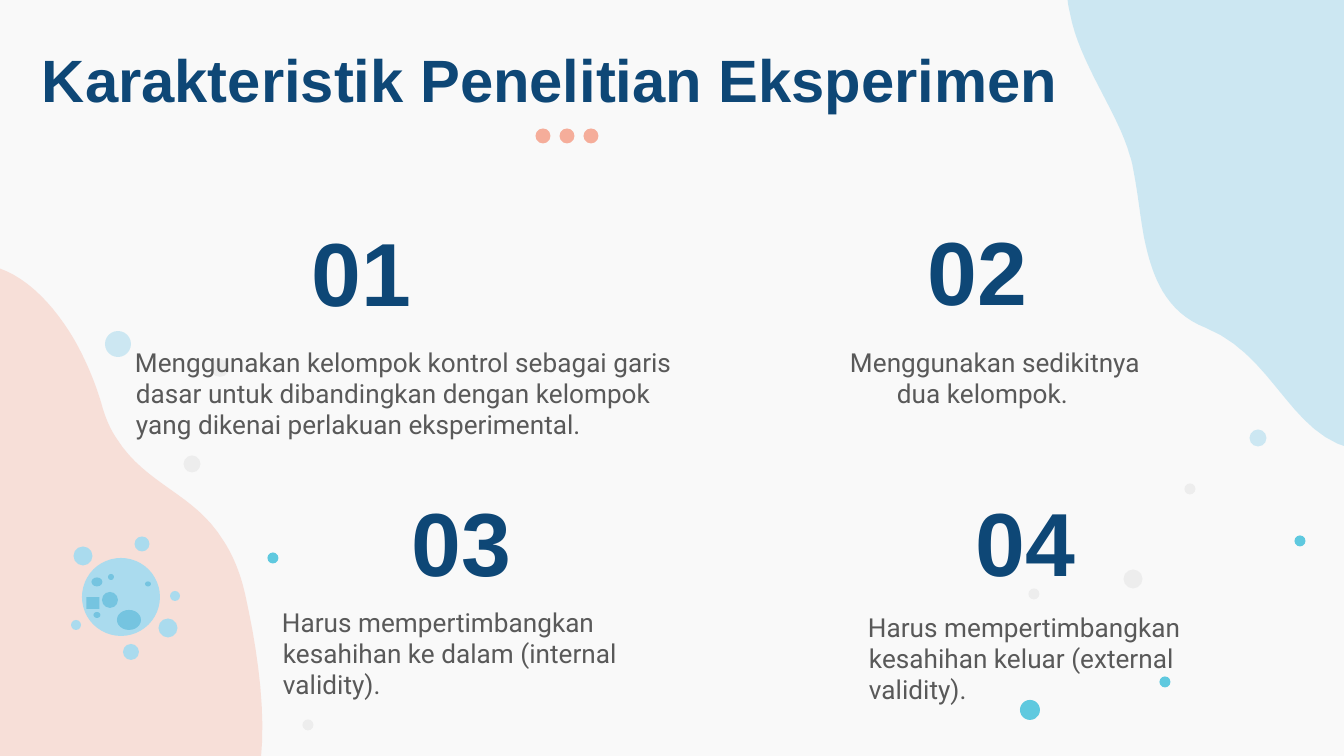
from lxml.etree import SubElement
from pptx import Presentation
from pptx.dml.color import RGBColor
from pptx.enum.shapes import MSO_SHAPE
from pptx.enum.text import MSO_ANCHOR, MSO_AUTO_SIZE, PP_ALIGN
from pptx.oxml.ns import qn
from pptx.util import Pt

W, H = 1344, 756          # slide size in px
EMU_PER_PX = 9144000 / W
INSET = 13

BACK = RGBColor(0xF9, 0xF9, 0xF9)
NAVY = RGBColor(0x0E, 0x47, 0x76)
TEXT = RGBColor(0x59, 0x59, 0x59)
SKY = RGBColor(0xAA, 0xDB, 0xEE)
CORAL = RGBColor(0xF5, 0xAD, 0x9A)
TEAL = RGBColor(0x02, 0xAC, 0xD0)
GREY = RGBColor(0xED, 0xED, 0xED)
SPOT = RGBColor(0x75, 0xC4, 0xE0)

TITLE_FONT = {"name": "Arial", "size": Pt(32), "bold": True}
NUMBER_FONT = {"name": "Arial", "size": Pt(48), "bold": True}
BODY_FONT = {"name": "Roboto", "size": Pt(14), "bold": False}

# Cubic curves: a start point, then rows of two controls and an end point
SKY_BLOB = (1070, 13), [
    (1079, 63, 1118, 112, 1130, 156), (1132, 161, 1133, 168, 1134, 173),
    (1138, 194, 1140, 215, 1144, 237), (1152, 276, 1165, 312, 1206, 328),
    (1289, 362, 1293, 470, 1403, 449), (1478, 434, 1509, 313, 1524, 224),
    (1528, 200, 1528, 180, 1525, 163), (1515, 109, 1474, 83, 1465, 30),
    (1462, 17, 1461, 4, 1462, -11), (1465, -35, 1464, -62, 1460, -89),
    (1450, -137, 1426, -181, 1382, -191), (1215, -222, 1087, -90, 1071, -35),
    (1066, -19, 1066, -3, 1070, 13)]
CORAL_BLOB = (-255, 570), [
    (-228, 613, -173, 644, -146, 681), (-142, 685, -140, 691, -136, 695),
    (-125, 712, -114, 732, -103, 751), (-82, 784, -56, 812, -12, 812),
    (78, 813, 121, 911, 216, 851), (280, 810, 265, 685, 246, 598),
    (241, 574, 233, 555, 223, 540), (194, 493, 146, 485, 117, 439),
    (110, 429, 105, 417, 101, 402), (94, 379, 83, 353, 69, 331),
    (42, 289, 4, 257, -40, 265), (-208, 298, -277, 468, -271, 524),
    (-270, 542, -265, 556, -255, 570)]

# Scattered dots: centre x, centre y, diameter
SKY_DOTS = [(118, 344, 26), (1258, 438, 17)]
TEAL_DOTS = [(273, 558, 11), (1165, 682, 11), (1030, 710, 20), (1300, 541, 11)]
GREY_DOTS = [(192, 464, 17), (308, 725, 11), (220, 368, 18),
             (1190, 489, 11), (1034, 594, 11), (1133, 579, 19)]

# Germ: body with satellites, then spots with their own width and height
GERM = [(121, 597, 78), (131, 652, 16), (142, 544, 15), (168, 628, 19),
        (83, 556, 19), (76, 625, 10), (175, 596, 10)]
GERM_SPOTS = [(97, 582, 11, 9), (111, 577, 6, 6), (148, 584, 6, 5),
              (110, 600, 16, 16), (129, 620, 24, 20), (97, 615, 7, 6)]

# Number, its left and top; description, its box and first-line indent
ITEMS = [
    ("01", (223, 238), "Menggunakan kelompok kontrol sebagai garis dasar untuk "
     "dibandingkan dengan kelompok yang dikenai perlakuan eksperimental.",
     (56, 333, 634, 102), -1),
    ("02", (839, 237), "Menggunakan sedikitnya dua kelompok.",
     (817, 333, 347, 102), -47),
    ("03", (323, 508), "Harus mempertimbangkan kesahihan ke dalam (internal "
     "validity).", (203, 593, 516, 106), -1),
    ("04", (887, 508), "Harus mempertimbangkan kesahihan keluar (external "
     "validity).", (789, 598, 473, 101), -1),
]


def px(n):
    return round(n * EMU_PER_PX)


def paint(sp, color, alpha=100):
    sp.shadow.inherit = False
    sp.line.fill.background()
    sp.fill.solid()
    sp.fill.fore_color.rgb = color
    if alpha < 100:
        clr = sp._element.spPr.find(qn("a:solidFill"))[0]
        SubElement(clr, qn("a:alpha"), val=str(alpha * 1000))


def add_blob(s, blob, color, alpha, steps=16):
    (x, y), curves = blob
    builder = s.shapes.build_freeform(px(x), px(y), scale=1.0)
    points = []
    for x1, y1, x2, y2, x3, y3 in curves:
        for i in range(1, steps + 1):
            t = i / steps
            a, b, c, d = (1-t)**3, 3*t*(1-t)**2, 3*t*t*(1-t), t**3
            points.append((px(a*x + b*x1 + c*x2 + d*x3),
                           px(a*y + b*y1 + c*y2 + d*y3)))
        x, y = x3, y3
    builder.add_line_segments(points, close=True)
    paint(builder.convert_to_shape(), color, alpha)


def add_spot(s, cx, cy, w, h, color, alpha=100, kind=MSO_SHAPE.OVAL):
    sp = s.shapes.add_shape(kind, px(cx - w / 2), px(cy - h / 2), px(w), px(h))
    paint(sp, color, alpha)


def add_dots(s, dots, color, alpha=100):
    for cx, cy, d in dots:
        add_spot(s, cx, cy, d, d, color, alpha)


def place(sp, box):
    for name, value in zip(("left", "top", "width", "height"), box):
        setattr(sp, name, px(value))


def set_text(sp, text, font, color, align, anchor=MSO_ANCHOR.TOP):
    tf = sp.text_frame
    frame = {"word_wrap": True, "auto_size": MSO_AUTO_SIZE.NONE,
             "vertical_anchor": anchor}
    frame.update({f"margin_{side}": px(INSET)
                  for side in ("left", "top", "right", "bottom")})
    for name, value in frame.items():
        setattr(tf, name, value)
    p = tf.paragraphs[0]
    p.alignment, p.space_before = align, Pt(0)
    r = p.add_run()
    r.text = text
    for name, value in font.items():
        setattr(r.font, name, value)
    r.font.color.rgb = color
    return p


def add_number(s, text, left, top):
    sp = s.shapes.add_textbox(px(left), px(top), px(277), px(65))
    set_text(sp, text, NUMBER_FONT, NAVY, PP_ALIGN.CENTER, MSO_ANCHOR.MIDDLE)


def fill_description(sp, text, box, indent):
    place(sp, box)
    p = set_text(sp, text, BODY_FONT, TEXT, PP_ALIGN.LEFT)
    pPr = p._p.get_or_add_pPr()
    pPr.set("marL", str(px(67)))
    pPr.set("indent", str(px(indent)))
    SubElement(pPr, qn("a:buNone"))


def main():
    prs = Presentation()
    prs.slide_width, prs.slide_height = px(W), px(H)
    s = prs.slides.add_slide(prs.slide_layouts.get_by_name("Comparison"))
    s.background.fill.solid()
    s.background.fill.fore_color.rgb = BACK
    title, *bodies = list(s.placeholders)

    # Background decoration
    add_blob(s, SKY_BLOB, SKY, 57)
    add_blob(s, CORAL_BLOB, CORAL, 34)
    add_dots(s, SKY_DOTS, SKY, 57)
    add_dots(s, TEAL_DOTS, TEAL, 62)
    add_dots(s, GREY_DOTS, GREY)
    add_dots(s, GERM, SKY)
    add_spot(s, 93, 603, 13, 12, SPOT, kind=MSO_SHAPE.RECTANGLE)
    for spot in GERM_SPOTS:
        add_spot(s, *spot, SPOT)

    # Placeholders go in front of the decoration
    for sp in (title, *bodies):
        s.shapes._spTree.append(sp._element)

    # Title with its three dots
    place(title, (-16, 30, 1133, 70))
    set_text(title, "Karakteristik Penelitian Eksperimen", TITLE_FONT, NAVY,
             PP_ALIGN.CENTER)
    add_dots(s, [(543 + 24 * i, 136, 15) for i in range(3)], CORAL)

    # Numbered characteristics
    for body, (number, corner, text, box, indent) in zip(bodies, ITEMS):
        fill_description(body, text, box, indent)
        add_number(s, number, *corner)

    prs.save("out.pptx")


if __name__ == "__main__":
    main()
